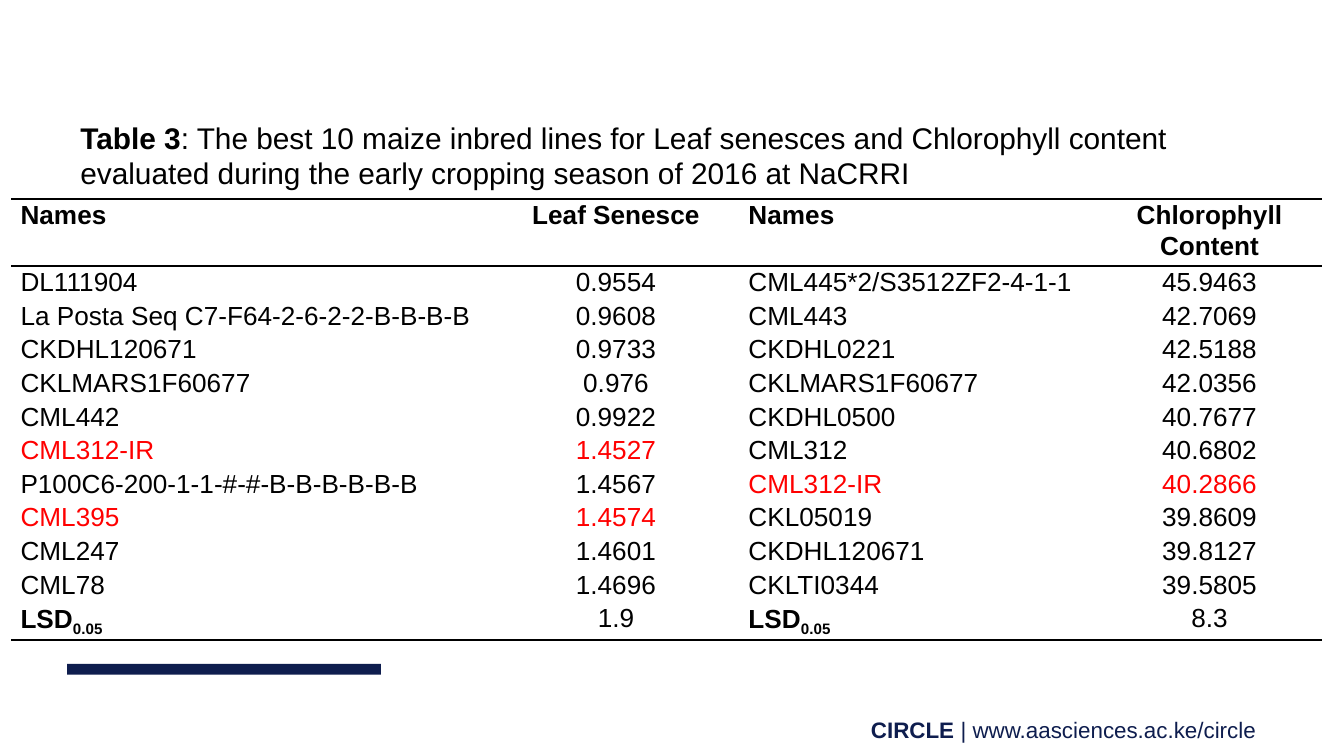
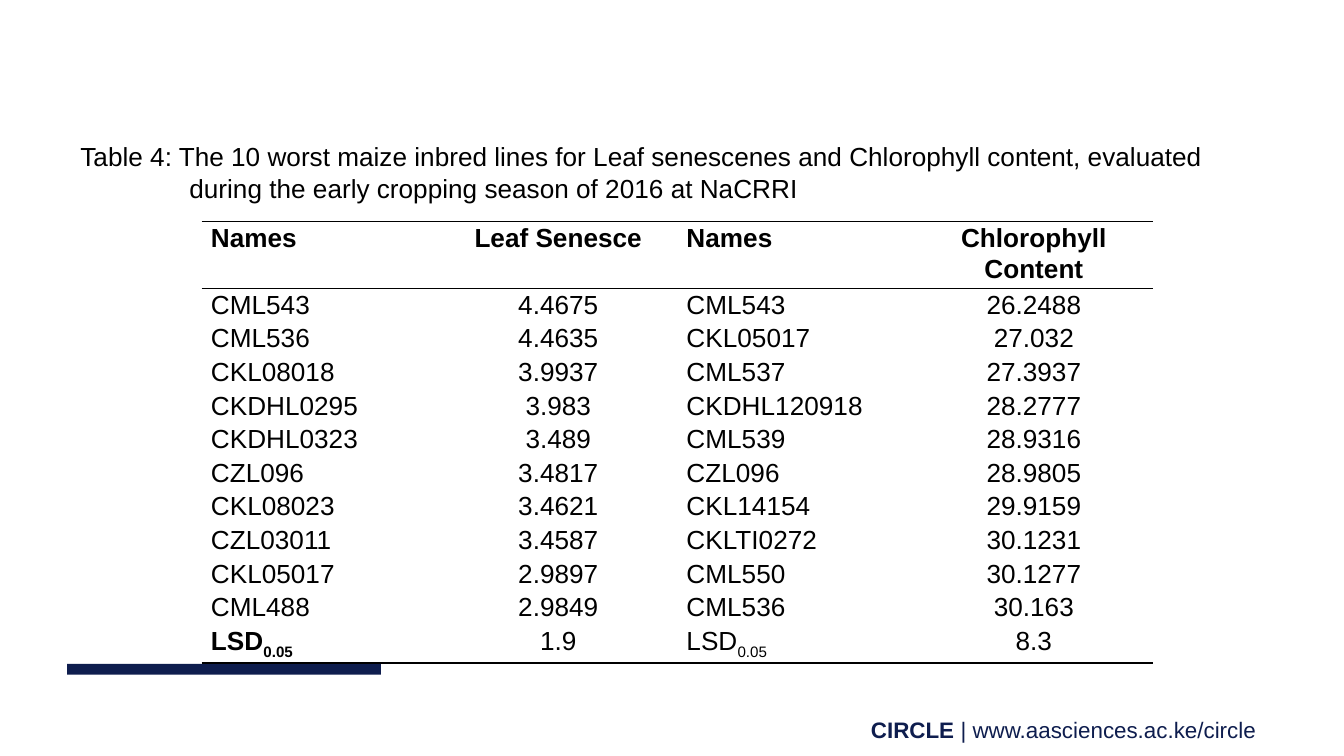
from lxml import etree
from pptx import Presentation
from pptx.dml.color import RGBColor
from pptx.enum.shapes import MSO_SHAPE as Shape
from pptx.enum.text import MSO_ANCHOR as Anchor, PP_ALIGN as Align
from pptx.oxml.ns import qn
from pptx.util import Pt

NAVY = RGBColor(0x0E, 0x1D, 0x4E)
BLACK = RGBColor(0x00, 0x00, 0x00)
WHITE = RGBColor(0xFF, 0xFF, 0xFF)
RED = RGBColor(0xFF, 0x00, 0x00)

NO_GRID_STYLE = "{2D5ABB26-0587-4C30-8999-92F81FD0307C}"
HEADER = ("Names", "Leaf Senesce", "Names", "Chlorophyll Content")
LSD = ("1.9", "8.3")
CHECK_LINES = {"CML312-IR", "CML395"}

BEST_LINES = [
    ("DL111904", "0.9554", "CML445*2/S3512ZF2-4-1-1", "45.9463"),
    ("La Posta Seq C7-F64-2-6-2-2-B-B-B-B", "0.9608", "CML443", "42.7069"),
    ("CKDHL120671", "0.9733", "CKDHL0221", "42.5188"),
    ("CKLMARS1F60677", "0.976", "CKLMARS1F60677", "42.0356"),
    ("CML442", "0.9922", "CKDHL0500", "40.7677"),
    ("CML312-IR", "1.4527", "CML312", "40.6802"),
    ("P100C6-200-1-1-#-#-B-B-B-B-B-B", "1.4567", "CML312-IR", "40.2866"),
    ("CML395", "1.4574", "CKL05019", "39.8609"),
    ("CML247", "1.4601", "CKDHL120671", "39.8127"),
    ("CML78", "1.4696", "CKLTI0344", "39.5805"),
]
WORST_LINES = [
    ("CML543", "4.4675", "CML543", "26.2488"),
    ("CML536", "4.4635", "CKL05017", "27.032"),
    ("CKL08018", "3.9937", "CML537", "27.3937"),
    ("CKDHL0295", "3.983", "CKDHL120918", "28.2777"),
    ("CKDHL0323", "3.489", "CML539", "28.9316"),
    ("CZL096", "3.4817", "CZL096", "28.9805"),
    ("CKL08023", "3.4621", "CKL14154", "29.9159"),
    ("CZL03011", "3.4587", "CKLTI0272", "30.1231"),
    ("CKL05017", "2.9897", "CML550", "30.1277"),
    ("CML488", "2.9849", "CML536", "30.163"),
]


class Deck:
    """Holds the shared style and the slide being filled."""

    font = "Arial"
    table_size = 14

    def __init__(self):
        self.prs = Presentation()
        self.prs.slide_width, self.prs.slide_height = Pt(720), Pt(405)
        self.s = None

    def new_slide(self):
        self.s = self.prs.slides.add_slide(self.prs.slide_layouts[6])
        p = self.text_box(360, 380, 323.5, 21.6).paragraphs[0]
        p.alignment = Align.RIGHT
        self.run(p, "CIRCLE ", 12, NAVY, bold=True)
        self.run(p, "| www.aasciences.ac.ke/circle ", 12, NAVY)
        self.bar(36, 355.7, 168, 5.8)

    def run(self, p, text, size, color=BLACK, bold=False, baseline=None):
        r = p.add_run()
        r.text = text
        r.font.name, r.font.size, r.font.bold = self.font, Pt(size), bold
        r.font.color.rgb = color
        if baseline is not None:
            r.font._element.set("baseline", str(baseline * 1000))

    def text_box(self, x, y, w, h):
        tf = self.s.shapes.add_textbox(Pt(x), Pt(y), Pt(w), Pt(h)).text_frame
        tf.word_wrap = True
        return tf

    def bar(self, x, y, w, h):
        sp = self.s.shapes.add_shape(Shape.RECTANGLE, Pt(x), Pt(y), Pt(w), Pt(h))
        sp.shadow.inherit = False
        sp.fill.solid()
        sp.fill.fore_color.rgb = NAVY
        sp.line.fill.background()

    def title(self, lines, size, hanging=0, lift=0):
        """Each line is a list of (text, bold); lift is added to the bottom inset."""
        tf = self.text_box(36, 58.3, 648, 67.7)
        tf.vertical_anchor = Anchor.MIDDLE
        tf.margin_bottom = Pt(3.6 + lift)
        p = tf.paragraphs[0]
        if hanging:
            pPr = p._p.get_or_add_pPr()
            pPr.set("marL", str(Pt(hanging)))
            pPr.set("indent", str(-Pt(hanging)))
        for i, line in enumerate(lines):
            if i:
                p.add_line_break()
            for text, bold in line:
                self.run(p, text, size, bold=bold)

    def rule(self, cell, *sides):
        """Draw a black one-point border on the sides, T before B."""
        for side in sides:
            ln = etree.SubElement(cell._tc.get_or_add_tcPr(), qn(f"a:ln{side}"), w=str(Pt(1)))
            fill = etree.SubElement(ln, qn("a:solidFill"))
            etree.SubElement(fill, qn("a:srgbClr"), val=str(BLACK))

    def cell(self, cell, col, sides=""):
        """Style a cell and return its paragraph; value columns are centred."""
        cell.margin_left = cell.margin_right = Pt(5)
        cell.margin_top = cell.margin_bottom = 0
        self.rule(cell, *sides)
        cell.fill.solid()
        cell.fill.fore_color.rgb = WHITE
        p = cell.text_frame.paragraphs[0]
        p.line_spacing = 1.07
        p.alignment = Align.CENTER if col % 2 else Align.LEFT
        return p

    def table(self, x, y, widths, heights, lines, bold_lsd=(True, True)):
        size = self.table_size
        tbl = self.s.shapes.add_table(len(lines) + 2, len(widths), Pt(x), Pt(y),
                                      Pt(sum(widths)), Pt(sum(heights))).table
        tbl.first_row = tbl.horz_banding = False
        tbl._tbl.tblPr.find(qn("a:tableStyleId")).text = NO_GRID_STYLE
        for column, w in zip(tbl.columns, widths):
            column.width = Pt(w)
        for row, h in zip(tbl.rows, heights):
            row.height = Pt(h)
        last = len(lines) + 1
        for col, heading in enumerate(HEADER):
            self.run(self.cell(tbl.cell(0, col), col, "TB"), heading, size, bold=True)
            for i, line in enumerate(lines, 1):
                color = RED if line[col - col % 2] in CHECK_LINES else BLACK
                self.run(self.cell(tbl.cell(i, col), col), line[col], size, color)
            p = self.cell(tbl.cell(last, col), col, "B")
            if col % 2:
                self.run(p, LSD[col // 2], size)
            else:
                bold = bold_lsd[col // 2]
                self.run(p, "LSD", size, bold=bold)
                self.run(p, "0.05", size, bold=bold, baseline=-25)


def main():
    deck = Deck()

    deck.new_slide()
    deck.title([[("Table 3", True),
                 (": The best 10 maize inbred lines for Leaf senesces and Chlorophyll content "
                  "evaluated during the early cropping season of 2016 at NaCRRI", False)]],
               size=16, lift=18)
    heights = [18 if i in (1, 2, 7) else 16 for i in range(12)]
    deck.table(6, 106.5, (258, 132, 192, 120), heights, BEST_LINES)

    deck.new_slide()
    deck.title([[("Table 4: The 10 worst maize inbred lines for Leaf senescenes and "
                  "Chlorophyll content, evaluated ", False)],
                [("during the early cropping season of 2016 at NaCRRI", False)]],
               size=14, hanging=58.4)
    deck.table(108, 118.6, [127.4] * 4, [17] * 12, WORST_LINES, bold_lsd=(True, False))

    deck.prs.save("out.pptx")


if __name__ == "__main__":
    main()
